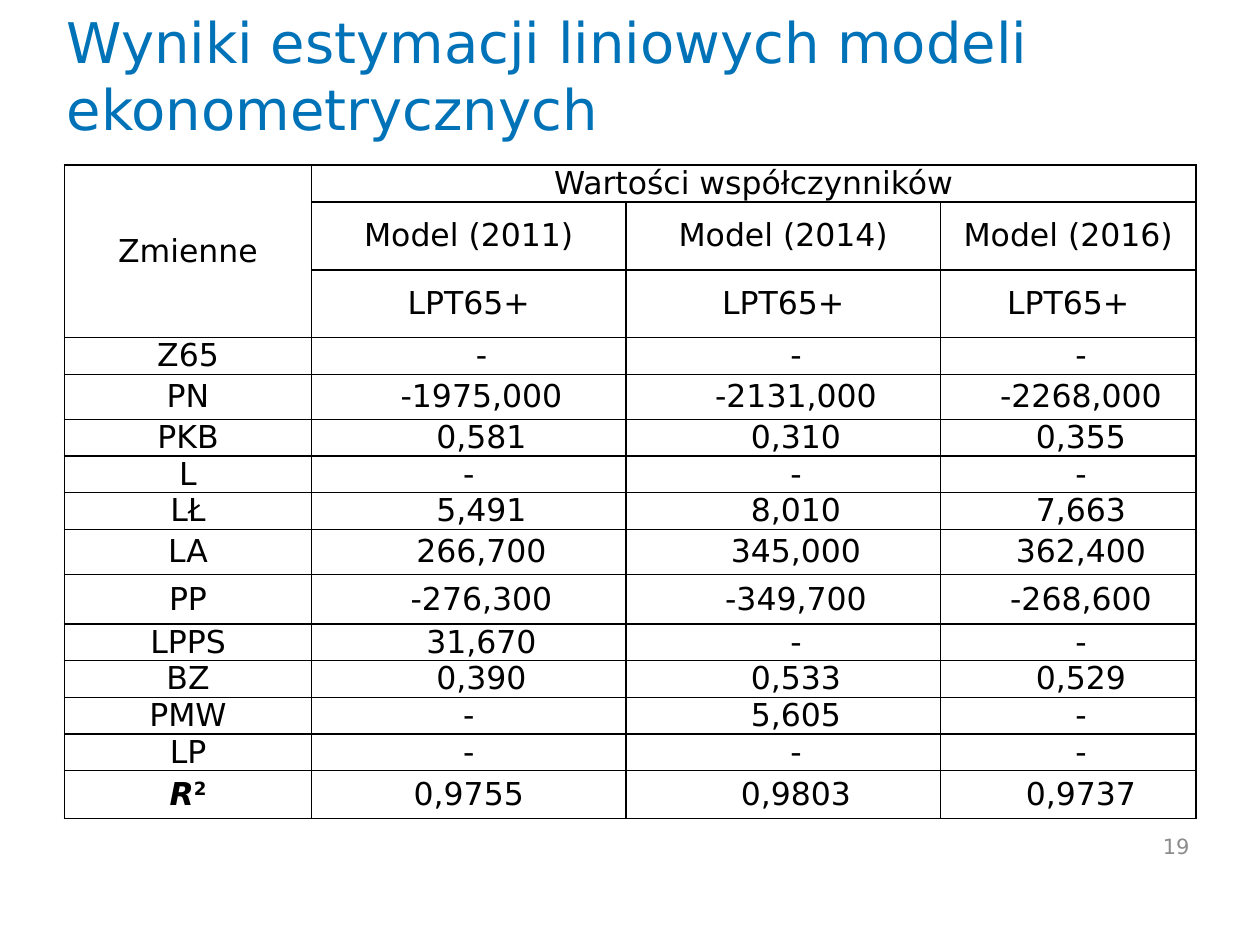
from lxml import etree
from pptx import Presentation
from pptx.dml.color import RGBColor
from pptx.enum.text import MSO_ANCHOR, MSO_AUTO_SIZE, PP_ALIGN
from pptx.oxml.ns import qn
from pptx.util import Cm, Pt

MIDDLE = MSO_ANCHOR.MIDDLE
NO_AUTOFIT = MSO_AUTO_SIZE.NONE
LEFT, CENTER, RIGHT = PP_ALIGN.LEFT, PP_ALIGN.CENTER, PP_ALIGN.RIGHT

FONT = "DejaVu Sans"
BLUE, BLACK, GREY = "0072B7", "000000", "8C8C8C"
VALUE_INDENT = Cm(0.51)

COLUMN_WIDTHS = [4.98, 6.34, 6.34, 5.15]
LOW_ROW, HEADER_ROW = 0.69, 1.37
HEADER_HEIGHTS = [LOW_ROW, HEADER_ROW, HEADER_ROW]
TALL_ROWS = {"PN": 0.91, "LA": 0.91, "PP": 1.0, "R²": 0.97}

MODELS = ["Model (2011)", "Model (2014)", "Model (2016)"]
COEFFICIENTS = [
    ("Z65", "-", "-", "-"),
    ("PN", "-1975,000", "-2131,000", "-2268,000"),
    ("PKB", "0,581", "0,310", "0,355"),
    ("L", "-", "-", "-"),
    ("LŁ", "5,491", "8,010", "7,663"),
    ("LA", "266,700", "345,000", "362,400"),
    ("PP", "-276,300", "-349,700", "-268,600"),
    ("LPPS", "31,670", "-", "-"),
    ("BZ", "0,390", "0,533", "0,529"),
    ("PMW", "-", "5,605", "-"),
    ("LP", "-", "-", "-"),
    ("R²", "0,9755", "0,9803", "0,9737"),
]
# Variables whose 2011 value is centred without an indent
PLAIN_2011 = {"L", "PMW", "LP", "R²"}


def color(hex_string):
    return RGBColor.from_string(hex_string)


def add_run(paragraph, text, size, hex_string, bold=False, italic=False):
    run = paragraph.add_run()
    run.text = text
    font = run.font
    font.name, font.size = FONT, Pt(size)
    font.bold, font.italic = bold, italic
    font.color.rgb = color(hex_string)
    return run


def place(shape, box):
    shape.left, shape.top, shape.width, shape.height = map(Cm, box)


def add_title(slide, box):
    title = slide.shapes.title
    place(title, box)
    frame = title.text_frame
    frame.word_wrap, frame.auto_size = True, NO_AUTOFIT
    frame.vertical_anchor = MIDDLE
    heading = frame.paragraphs[0]
    heading.alignment = LEFT
    add_run(heading, "Wyniki estymacji liniowych modeli ekonometrycznych", 32, BLUE)


def set_borders(cell):
    properties = cell._tc.get_or_add_tcPr()
    for side in ("a:lnL", "a:lnR", "a:lnT", "a:lnB"):
        line = etree.SubElement(properties, qn(side), w=str(Pt(1)))
        fill = etree.SubElement(line, qn("a:solidFill"))
        etree.SubElement(fill, qn("a:srgbClr"), val=BLACK)


def fill_cell(cell, text, side_margin=0.13, indented=False):
    cell.margin_left = cell.margin_right = Cm(side_margin)
    cell.margin_top = cell.margin_bottom = 0
    cell.vertical_anchor = MIDDLE
    paragraph = cell.text_frame.paragraphs[0]
    paragraph.alignment = CENTER
    if indented:
        paragraph._p.get_or_add_pPr().set("indent", str(VALUE_INDENT))
    if text == "R²":
        add_run(paragraph, "R", 18, BLACK, bold=True, italic=True)
        exponent = add_run(paragraph, "2", 18, BLACK, bold=True)
        exponent._r.get_or_add_rPr().set("baseline", "30000")
    else:
        add_run(paragraph, text, 18, BLACK)


def add_results_table(slide, left, top):
    heights = HEADER_HEIGHTS + [TALL_ROWS.get(row[0], LOW_ROW) for row in COEFFICIENTS]
    table = slide.shapes.add_table(
        len(heights), len(COLUMN_WIDTHS), Cm(left), Cm(top),
        Cm(sum(COLUMN_WIDTHS)), Cm(sum(heights))).table
    table.first_row = table.horz_banding = False
    for column, width in zip(table.columns, COLUMN_WIDTHS):
        column.width = Cm(width)
    for row, height in zip(table.rows, heights):
        row.height = Cm(height)
    for cell in table.iter_cells():
        set_borders(cell)
        cell.fill.background()

    # Header
    table.cell(0, 0).merge(table.cell(2, 0))
    table.cell(0, 1).merge(table.cell(0, 3))
    fill_cell(table.cell(0, 0), "Zmienne", side_margin=0.05)
    fill_cell(table.cell(0, 1), "Wartości współczynników")
    for c, model in enumerate(MODELS, start=1):
        fill_cell(table.cell(1, c), model)
        fill_cell(table.cell(2, c), "LPT65+")

    # Coefficients
    for r, (variable, *values) in enumerate(COEFFICIENTS, start=len(HEADER_HEIGHTS)):
        fill_cell(table.cell(r, 0), variable, side_margin=0.05)
        for c, value in enumerate(values, start=1):
            indented = c > 1 or variable not in PLAIN_2011
            fill_cell(table.cell(r, c), value, indented=indented)


def add_page_number(slide, box):
    frame = slide.shapes.add_textbox(*map(Cm, box)).text_frame
    frame.word_wrap = True
    frame.vertical_anchor = MIDDLE
    number = frame.paragraphs[0]
    number.alignment = RIGHT
    add_run(number, "19", 12, GREY)


def main():
    presentation = Presentation()
    presentation.slide_width, presentation.slide_height = Cm(25.4), Cm(19.05)
    slide = presentation.slides.add_slide(presentation.slide_layouts[5])
    add_title(slide, (1.09, 0.53, 22.86, 1.96))
    add_results_table(slide, 1.3, 3.33)
    add_page_number(slide, (22.5, 16.54, 1.73, 1.02))
    presentation.save("out.pptx")


if __name__ == "__main__":
    main()
